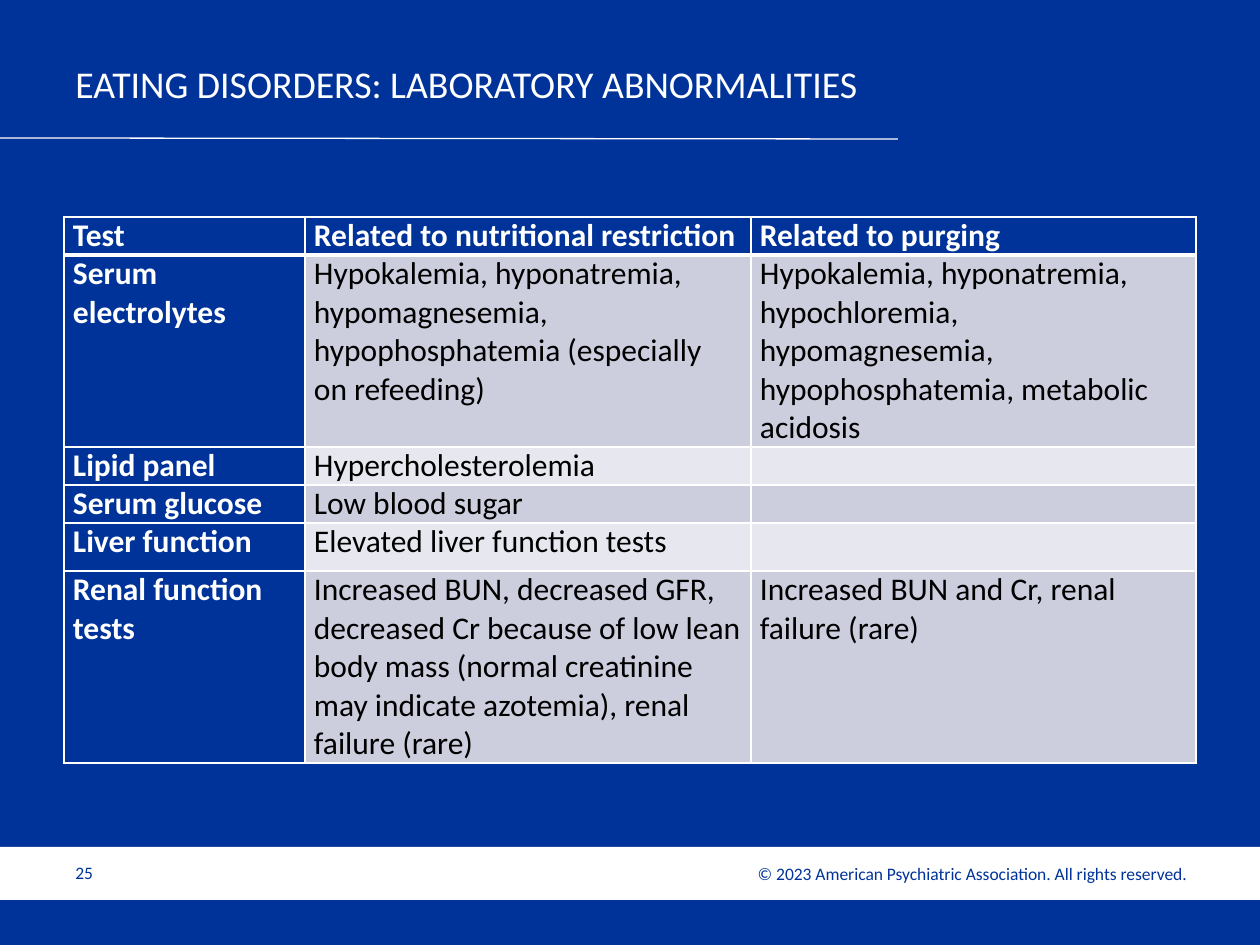
from dataclasses import dataclass

from lxml.etree import SubElement
from pptx import Presentation
from pptx.dml.color import RGBColor as Color
from pptx.enum.shapes import MSO_CONNECTOR as Connector, MSO_SHAPE as Shape
from pptx.enum.text import MSO_ANCHOR as Anchor, PP_ALIGN as Align
from pptx.oxml.ns import qn
from pptx.util import Inches, Pt

EMU_PER_PX = Inches(1) / 126


@dataclass(frozen=True)
class Theme:
    font: str = "Calibri"
    navy: str = "003399"
    white: str = "FFFFFF"
    black: str = "000000"
    bands: tuple = ("CCCEDE", "E7E8EF")
    title_size: float = 21.6
    table_size: float = 18
    footer_size: float = 10
    thin: float = 1
    thick: float = 3


def px(*lengths):
    return [round(length * EMU_PER_PX) for length in lengths]


class SlideBuilder:
    def __init__(self, page, theme):
        self.page = page
        self.theme = theme

    def background(self, color):
        fill = self.page.background.fill
        fill.solid()
        fill.fore_color.rgb = Color.from_string(color)

    def add_span(self, frame, content, size, color, bold=False, align=Align.LEFT):
        para = frame.paragraphs[0]
        para.alignment = align
        span = para.add_run()
        span.text = content
        formats = {"name": self.theme.font, "size": Pt(size), "bold": bold}
        for name, value in formats.items():
            setattr(span.font, name, value)
        span.font.color.rgb = Color.from_string(color)

    def text(self, bounds, content, size, color, align=Align.LEFT):
        frame = self.page.shapes.add_textbox(*px(*bounds)).text_frame
        frame.word_wrap = True
        frame.vertical_anchor = Anchor.MIDDLE
        self.add_span(frame, content, size, color, align=align)

    def band(self, bounds, color):
        box = self.page.shapes.add_shape(Shape.RECTANGLE, *px(*bounds))
        box.shadow.inherit = False
        box.fill.solid()
        box.fill.fore_color.rgb = Color.from_string(color)
        box.line.fill.background()

    def rule(self, ends, color, width):
        line = self.page.shapes.add_connector(Connector.STRAIGHT, *px(*ends))
        line.line.color.rgb = Color.from_string(color)
        line.line.width = Pt(width)
        SubElement(line._element.spPr, qn("a:effectLst"))

    def borders(self, cell, widths):
        properties = cell._tc.get_or_add_tcPr()
        for side, width in widths.items():
            edge = SubElement(properties, qn(f"a:ln{side}"), w=str(Pt(width)))
            fill = SubElement(edge, qn("a:solidFill"))
            SubElement(fill, qn("a:srgbClr"), val=self.theme.white)

    def table(self, left, top, columns, heights, rows):
        theme = self.theme
        bounds = px(left, top, sum(columns), sum(heights))
        table = self.page.shapes.add_table(len(rows), len(columns), *bounds).table
        table.horz_banding = False
        for column, width in zip(table.columns, px(*columns)):
            column.width = width
        for row, height in zip(table.rows, px(*heights)):
            row.height = height
        margins = dict(zip(("margin_left", "margin_top", "margin_right", "margin_bottom"),
                           px(9, 0, 9, 0)))
        for r, values in enumerate(rows):
            for c, content in enumerate(values):
                cell = table.cell(r, c)
                for name, value in margins.items():
                    setattr(cell, name, value)
                # The heavy edge lies between the header and the first body row
                self.borders(cell, {"L": theme.thin, "R": theme.thin,
                                    "T": theme.thick if r == 1 else theme.thin,
                                    "B": theme.thick if r == 0 else theme.thin})
                heading = r == 0 or c == 0
                color = theme.navy if heading else theme.bands[(r - 1) % 2]
                cell.fill.solid()
                cell.fill.fore_color.rgb = Color.from_string(color)
                if content:
                    self.add_span(cell.text_frame, content, theme.table_size,
                                  theme.white if heading else theme.black, heading)


LAB_ROWS = [
    ("Test", "Related to nutritional restriction", "Related to purging"),
    ("Serum electrolytes",
     "Hypokalemia, hyponatremia, hypomagnesemia, hypophosphatemia (especially on refeeding)",
     "Hypokalemia, hyponatremia, hypochloremia, hypomagnesemia, hypophosphatemia, "
     "metabolic acidosis"),
    ("Lipid panel", "Hypercholesterolemia", ""),
    ("Serum glucose", "Low blood sugar", ""),
    ("Liver function", "Elevated liver function tests", ""),
    ("Renal function tests",
     "Increased BUN, decreased GFR, decreased Cr because of low lean body mass "
     "(normal creatinine may indicate azotemia), renal failure (rare)",
     "Increased BUN and Cr, renal failure (rare)"),
]


def main():
    deck = Presentation()
    deck.slide_width, deck.slide_height = px(1260, 945)
    theme = Theme()
    builder = SlideBuilder(deck.slides.add_slide(deck.slide_layouts[6]), theme)
    builder.background(theme.navy)

    # Footer
    builder.band((0, 847, 1260, 53), theme.white)
    builder.text((653, 856, 546, 34),
                 "© 2023 American Psychiatric Association. All rights reserved.",
                 theme.footer_size, theme.navy, Align.RIGHT)
    builder.text((63, 847, 294, 51), "25", theme.footer_size, theme.navy)

    # Title and rule
    builder.rule((0, 138, 898, 139), theme.white, 0.75)
    builder.text((63, 43, 835, 81), "EATING DISORDERS: LABORATORY ABNORMALITIES",
                 theme.title_size, theme.white)

    # Laboratory findings
    builder.table(64, 217, (241, 446, 445), (38, 192, 38, 38, 48, 192), LAB_ROWS)

    deck.save("out.pptx")


if __name__ == "__main__":
    main()
